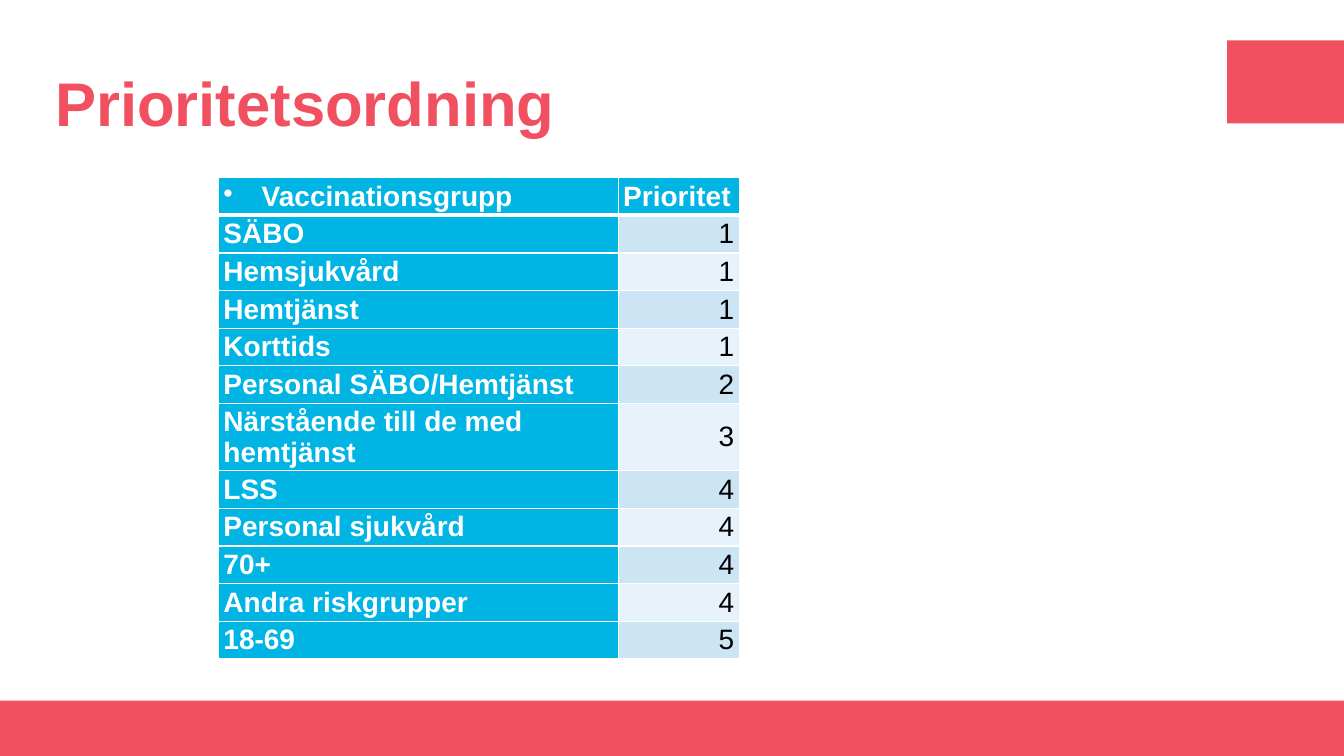
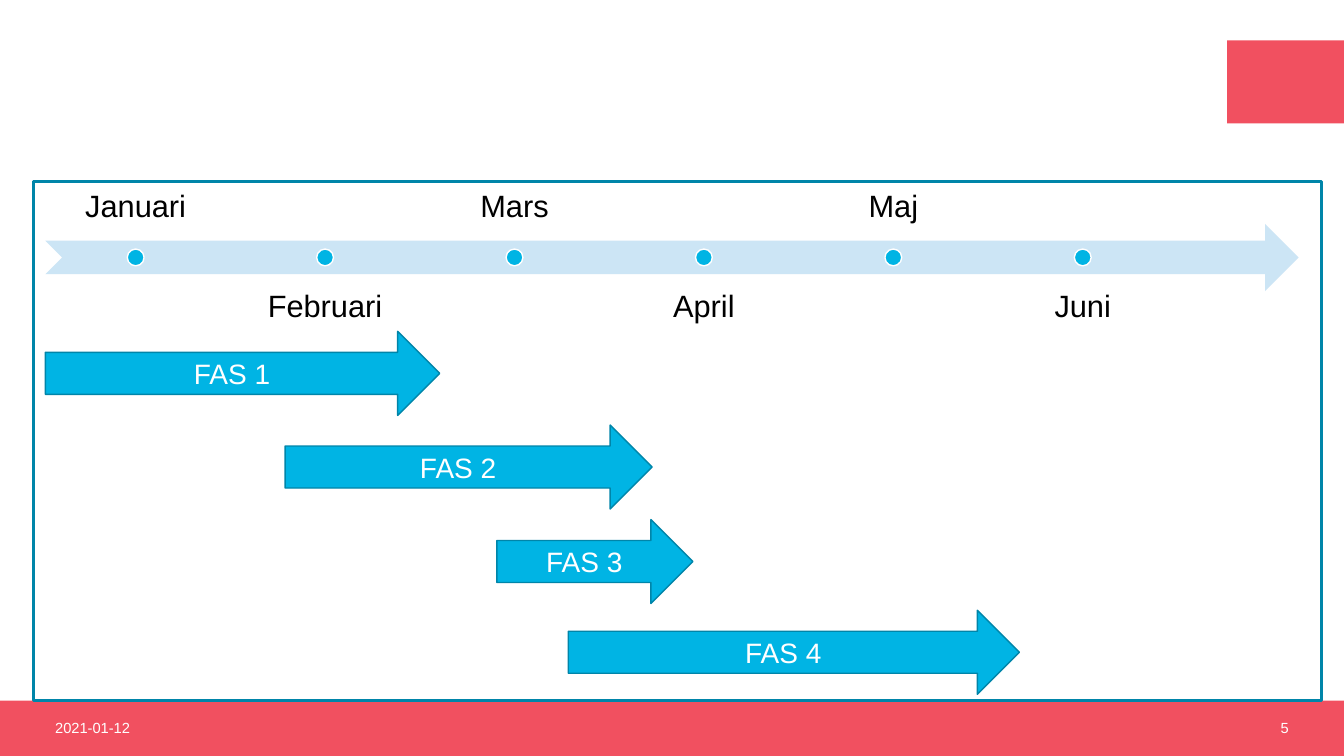
from lxml.etree import SubElement
from pptx import Presentation
from pptx.dml.color import RGBColor
from pptx.enum.shapes import MSO_SHAPE
from pptx.enum.text import MSO_ANCHOR, PP_ALIGN
from pptx.oxml.ns import qn
from pptx.util import Emu, Inches, Pt

COLORS = {
    "coral": "F15060",
    "cyan": "00B4E4",
    "teal": "0085A9",
    "pale": "CCE5F5",
    "paler": "E7F2FA",
    "white": "FFFFFF",
    "black": "000000",
}
FONT = "Arial"

# The slide is a grid of square units, twelve to the inch.
COLUMNS, ROWS = 160, 90
UNIT = Inches(1) // 12
MARGIN = 5.4
FOOTER_TOP = 83.4

PRIORITIES = [
    ("SÄBO", "1"),
    ("Hemsjukvård", "1"),
    ("Hemtjänst", "1"),
    ("Korttids", "1"),
    ("Personal SÄBO/Hemtjänst", "2"),
    ("Närstående till de med hemtjänst", "3"),
    ("LSS", "4"),
    ("Personal sjukvård", "4"),
    ("70+", "4"),
    ("Andra riskgrupper", "4"),
    ("18-69", "5"),
]
TWO_LINE_ROW = 6
GROUP_WIDTH, PRIORITY_WIDTH = 47.6, 14.4
ROW_HEIGHT, TWO_LINE_HEIGHT = 4.48, 7.86

MONTHS = ["Januari", "Februari", "Mars", "April", "Maj", "Juni"]
MONTH_WIDTH, MONTH_PITCH = 21.5, 22.55
TIMELINE_TOP, TIMELINE_HEIGHT = 26.65, 8
LABEL_SHIFT = 6
DOT = 2

# Name, left, top and width of each phase
PHASES = [
    ("FAS 1", MARGIN, 39.45, 46.95),
    ("FAS 2", 33.95, 50.6, 43.7),
    ("FAS 3", 59.15, 61.85, 23.35),
    ("FAS 4", 67.65, 72.65, 53.7),
]
PHASE_HEIGHT = 10


def color(name):
    return RGBColor.from_string(COLORS[name])


def grid(*units):
    return [Emu(round(unit * UNIT)) for unit in units]


def write(frame, words, size, ink, bold=False, align=PP_ALIGN.LEFT, spacing=None):
    paragraph = frame.paragraphs[0]
    paragraph.alignment = align
    if spacing:
        paragraph.line_spacing = spacing
    run = paragraph.add_run()
    run.text = words
    run.font.name = FONT
    run.font.size = Pt(size)
    run.font.bold = bold
    run.font.color.rgb = color(ink)


def add_figure(slide, preset, place, fill=None, line=None, weight=1):
    figure = slide.shapes.add_shape(preset, *grid(*place))
    figure.shadow.inherit = False
    if fill:
        figure.fill.solid()
        figure.fill.fore_color.rgb = color(fill)
    else:
        figure.fill.background()
    if line:
        figure.line.color.rgb = color(line)
        figure.line.width = Pt(weight)
    else:
        figure.line.fill.background()
    return figure


def add_words(slide, place, words, size, ink, anchor=MSO_ANCHOR.MIDDLE, inset=None, **style):
    frame = slide.shapes.add_textbox(*grid(*place)).text_frame
    frame.word_wrap = True
    frame.vertical_anchor = anchor
    if inset:
        frame.margin_left = frame.margin_right = Inches(inset)
        frame.margin_top = frame.margin_bottom = Inches(inset)
    write(frame, words, size, ink, **style)


def add_slide(deck):
    """Add a blank slide with the coral footer band and corner marker."""
    slide = deck.slides.add_slide(deck.slide_layouts[6])
    for place in [
        (0, FOOTER_TOP, COLUMNS, ROWS - FOOTER_TOP),
        (146.1, 4.8, COLUMNS - 146.1, 9.9),
    ]:
        add_figure(slide, MSO_SHAPE.RECTANGLE, place, "coral")
    return slide


def add_title(slide, words):
    add_words(slide, (MARGIN, 4.8, 139.3, 15.84), words, 44, "coral", bold=True, spacing=0.9)


def add_footer(slide, date, number):
    width = 36
    for left, words, align in [
        (MARGIN, date, PP_ALIGN.LEFT),
        (COLUMNS - MARGIN - width, number, PP_ALIGN.RIGHT),
    ]:
        add_words(slide, (left, FOOTER_TOP, width, 6.5), words, 10.5, "white", align=align)


def add_bullet(paragraph, indent):
    properties = paragraph._p.get_or_add_pPr()
    properties.set("marL", str(Inches(indent)))
    properties.set("indent", str(-Inches(indent)))
    SubElement(properties, qn("a:buChar"), char="•")


def set_borders(cell, top, bottom):
    """Draw white borders; top and bottom are widths in points."""
    properties = cell._tc.get_or_add_tcPr()
    for side, weight in [("L", 1), ("R", 1), ("T", top), ("B", bottom)]:
        edge = SubElement(properties, qn(f"a:ln{side}"), w=str(Pt(weight)))
        fill = SubElement(edge, qn("a:solidFill"))
        SubElement(fill, qn("a:srgbClr"), val=COLORS["white"])


def fill_cell(cell, words, fill, ink, bold, align, top=1, bottom=1):
    set_borders(cell, top, bottom)
    cell.fill.solid()
    cell.fill.fore_color.rgb = color(fill)
    cell.margin_left = cell.margin_right = Inches(0.05)
    cell.margin_top = cell.margin_bottom = 0
    cell.vertical_anchor = MSO_ANCHOR.MIDDLE
    write(cell.text_frame, words, 20, ink, bold=bold, align=align)


def add_priority_table(slide):
    heights = [ROW_HEIGHT] * (len(PRIORITIES) + 1)
    heights[TWO_LINE_ROW] = TWO_LINE_HEIGHT
    widths = [GROUP_WIDTH, PRIORITY_WIDTH]
    place = grid(26, 21.15, sum(widths), sum(heights))
    table = slide.shapes.add_table(len(heights), len(widths), *place).table
    table.first_row = table.horz_banding = False
    for column, width in zip(table.columns, grid(*widths)):
        column.width = width
    for row, height in zip(table.rows, grid(*heights)):
        row.height = height

    add_bullet(table.cell(0, 0).text_frame.paragraphs[0], 0.38)
    for column, heading in enumerate(["Vaccinationsgrupp", "Prioritet"]):
        fill_cell(table.cell(0, column), heading, "cyan", "white", True, PP_ALIGN.LEFT, bottom=3)
    for row, (group, priority) in enumerate(PRIORITIES, start=1):
        top = 3 if row == 1 else 1
        band = "pale" if row % 2 else "paler"
        fill_cell(table.cell(row, 0), group, "cyan", "white", True, PP_ALIGN.LEFT, top)
        fill_cell(table.cell(row, 1), priority, band, "black", False, PP_ALIGN.RIGHT, top)


def add_timeline(slide):
    """Draw the arrow with one dot per month, labels alternating above and below."""
    band = (MARGIN, TIMELINE_TOP, COLUMNS - 2 * MARGIN, TIMELINE_HEIGHT)
    add_figure(slide, MSO_SHAPE.NOTCHED_RIGHT_ARROW, band, "pale")
    for index, month in enumerate(MONTHS):
        left = MARGIN + index * MONTH_PITCH
        below = index % 2
        label_top = TIMELINE_TOP + (LABEL_SHIFT if below else -LABEL_SHIFT)
        add_words(
            slide, (left, label_top, MONTH_WIDTH, TIMELINE_HEIGHT), month, 22, "black",
            anchor=MSO_ANCHOR.TOP if below else MSO_ANCHOR.BOTTOM,
            inset=0.17, align=PP_ALIGN.CENTER, spacing=0.9,
        )
        dot_left = left + (MONTH_WIDTH - DOT) / 2
        dot_top = TIMELINE_TOP + (TIMELINE_HEIGHT - DOT) / 2
        add_figure(slide, MSO_SHAPE.OVAL, (dot_left, dot_top, DOT, DOT), "cyan", "white")


def add_phase(slide, name, left, top, width):
    place = (left, top, width, PHASE_HEIGHT)
    arrow = add_figure(slide, MSO_SHAPE.RIGHT_ARROW, place, "cyan", "teal")
    arrow.text_frame.vertical_anchor = MSO_ANCHOR.MIDDLE
    write(arrow.text_frame, name, 20, "white", align=PP_ALIGN.CENTER)


def main():
    deck = Presentation()
    deck.slide_width, deck.slide_height = grid(COLUMNS, ROWS)

    priorities = add_slide(deck)
    add_title(priorities, "Prioritetsordning")
    add_priority_table(priorities)

    schedule = add_slide(deck)
    add_footer(schedule, "2021-01-12", "5")
    add_timeline(schedule)
    for phase in PHASES:
        add_phase(schedule, *phase)
    frame = (4, 21.6, 153.35, FOOTER_TOP - 21.6)
    add_figure(schedule, MSO_SHAPE.RECTANGLE, frame, line="teal", weight=2.25)

    deck.save("out.pptx")


if __name__ == "__main__":
    main()
